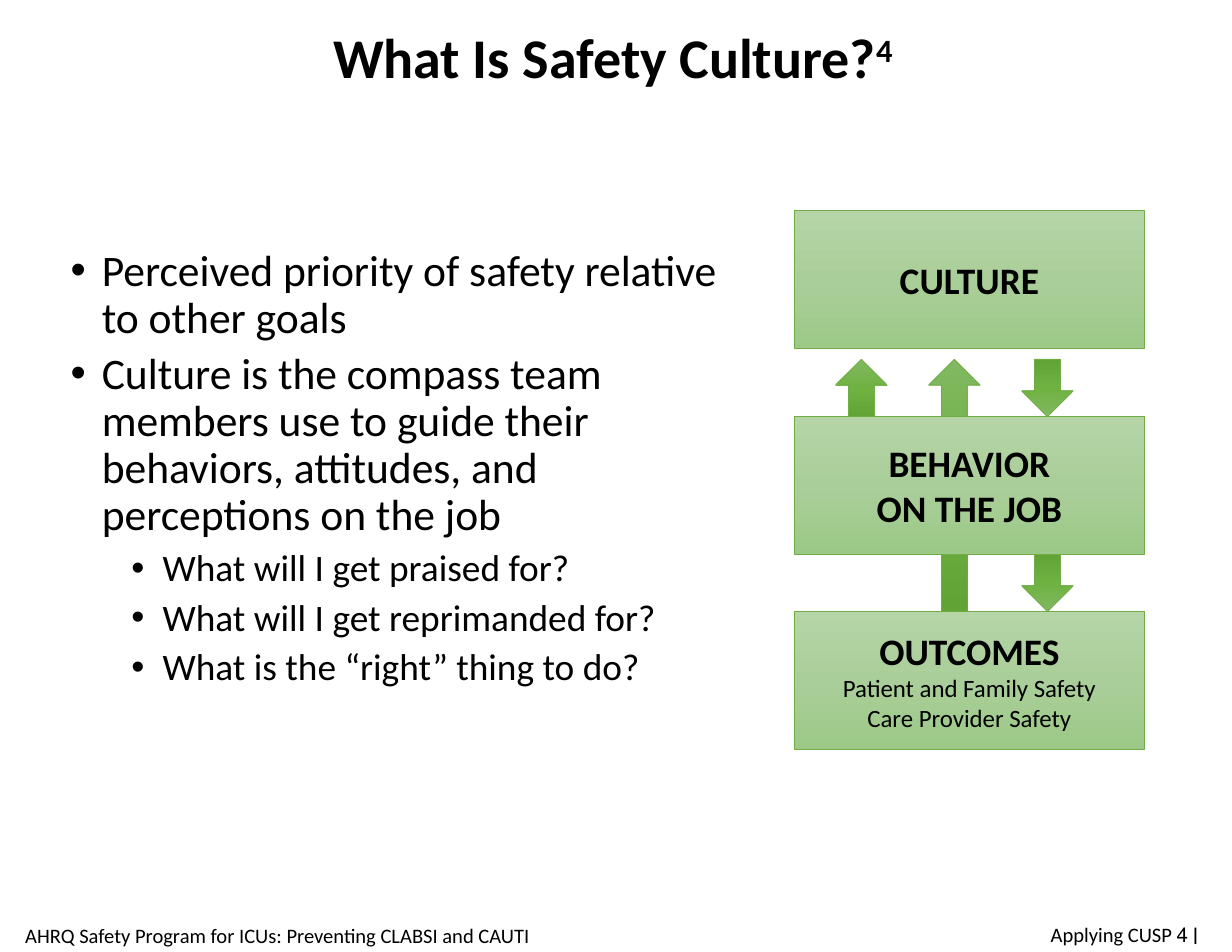
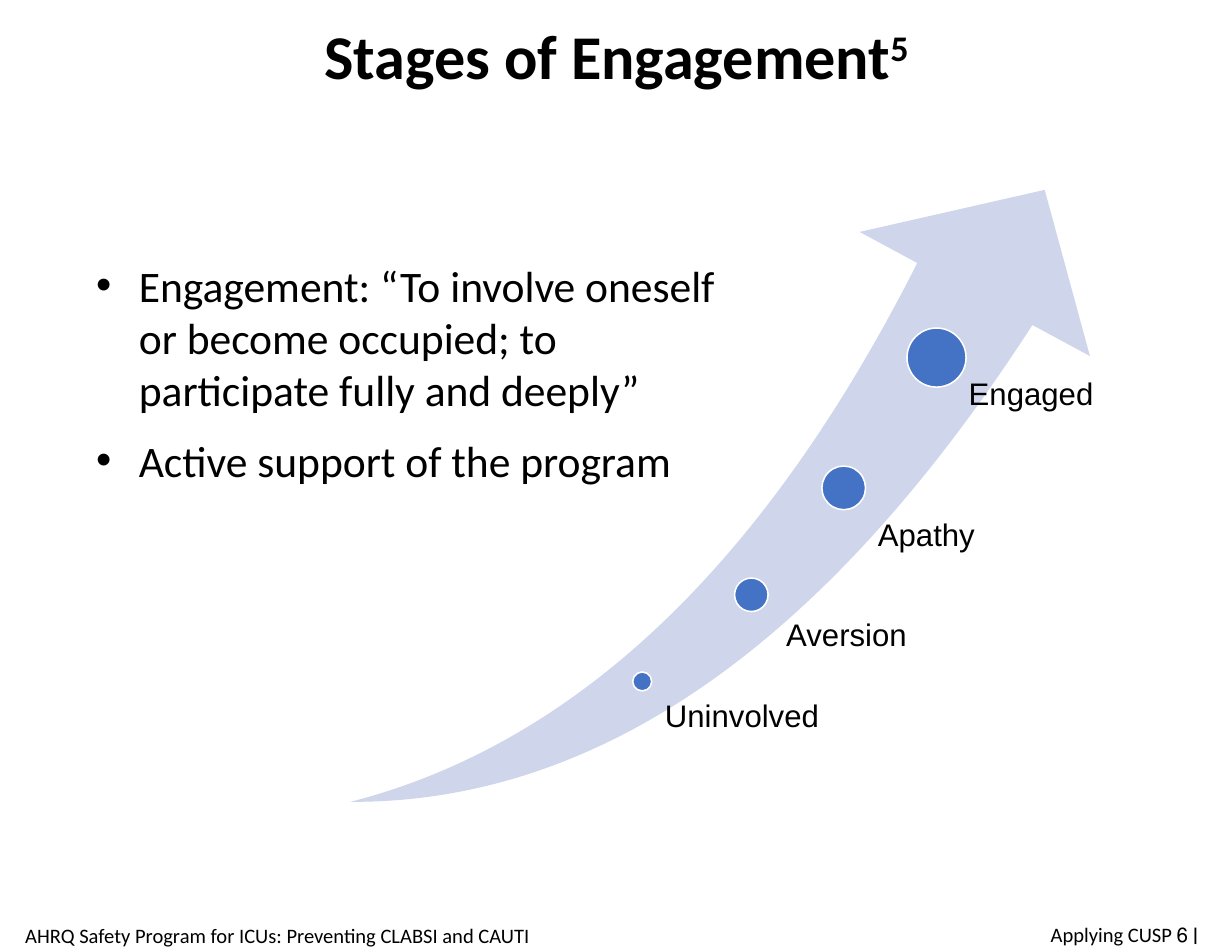
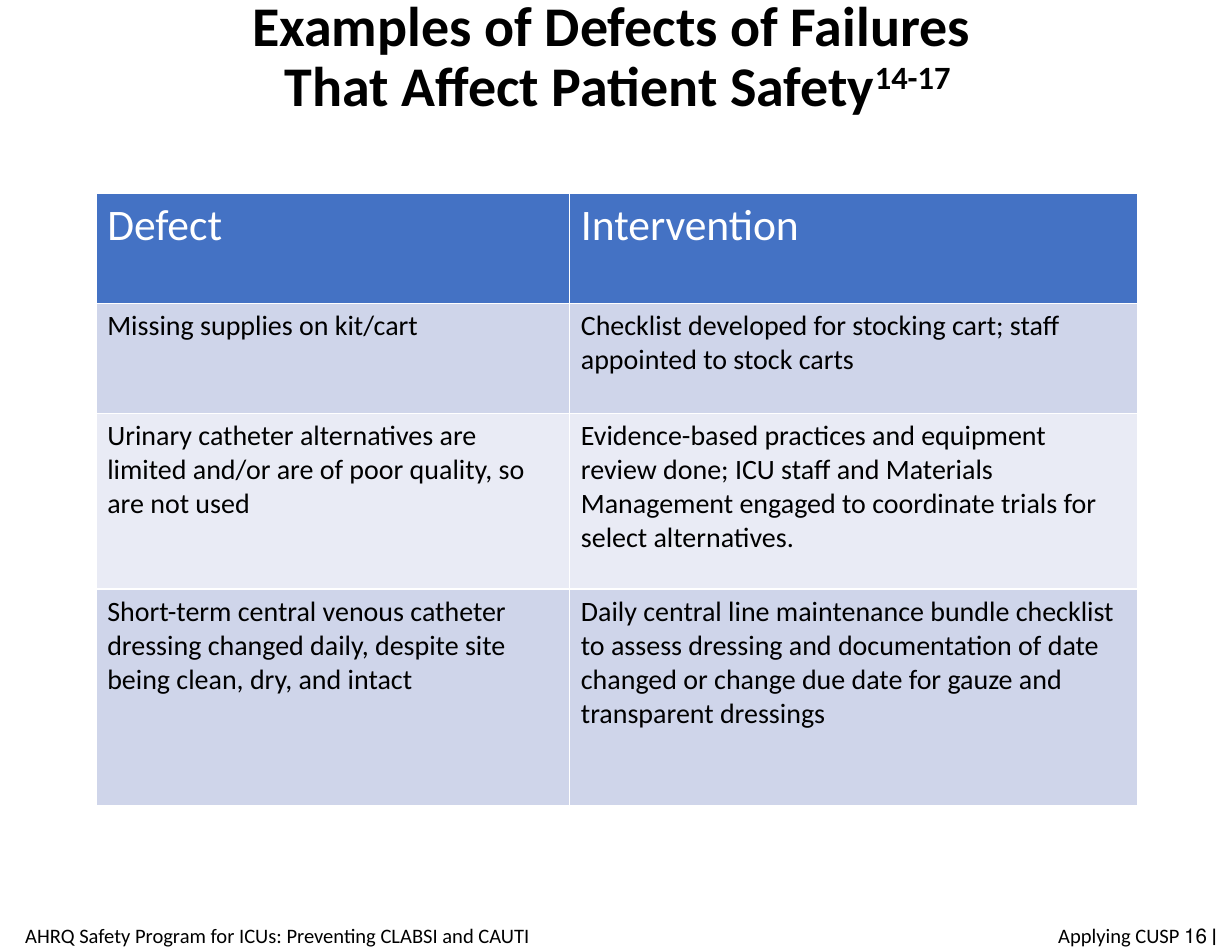
"""Build three slides on safety culture, stages of engagement and patient safety defects."""
from copy import deepcopy

from lxml import etree
from pptx import Presentation
from pptx.dml.color import RGBColor
from pptx.enum.shapes import MSO_SHAPE
from pptx.enum.text import MSO_ANCHOR, PP_ALIGN
from pptx.oxml.ns import qn
from pptx.util import Cm, Pt

RECTANGLE, OVAL = MSO_SHAPE.RECTANGLE, MSO_SHAPE.OVAL
UP_ARROW, SWOOSH = MSO_SHAPE.UP_ARROW, MSO_SHAPE.SWOOSH_ARROW
LEFT, CENTER, RIGHT = PP_ALIGN.LEFT, PP_ALIGN.CENTER, PP_ALIGN.RIGHT
TOP, MIDDLE = MSO_ANCHOR.TOP, MSO_ANCHOR.MIDDLE

COLORS = {
    "black": "000000",
    "white": "FFFFFF",
    "blue": "4472C4",
    "pale_blue": "CFD5EA",
    "paler_blue": "E9EBF5",
    "green": "70AD47",
}
ARROW_GRADIENT = ("81B861", "6FB242", "62A336")
BOX_GRADIENT = ("B5D5A7", "AACE9A", "9CC987")


def write(frame, text, superscript="", size=18, bold=False, font="Calibri", color="black",
          align=LEFT, anchor=TOP, line=1.0, before=0, after=0, bullet_at=None, hang=0):
    """Append one formatted paragraph to a text frame."""
    first = not frame.text
    paragraph = frame.paragraphs[0] if first else frame.add_paragraph()
    frame.word_wrap, frame.vertical_anchor = True, anchor
    paragraph.text = text
    if superscript:
        raised = paragraph.add_run()
        raised.text = superscript
        raised.font._element.set("baseline", "30000")
    paragraph.alignment, paragraph.line_spacing = align, line
    paragraph.space_before, paragraph.space_after = Pt(0 if first else before), Pt(after)
    if bullet_at is not None:
        properties = paragraph._p.get_or_add_pPr()
        properties.set("marL", str(Cm(bullet_at + hang)))
        properties.set("indent", str(-Cm(hang)))
        etree.SubElement(properties, qn("a:buFont")).set("typeface", "Arial")
        etree.SubElement(properties, qn("a:buChar")).set("char", "•")
    for run in paragraph.runs:
        run.font.name, run.font.size, run.font.bold = font, Pt(size), bold
        run.font.color.rgb = RGBColor.from_string(COLORS[color])


def draw(slide, kind, place, fill, outline=None, weight=1):
    """Add a preset shape with a plain colour or a downward three-colour gradient."""
    shape = slide.shapes.add_shape(kind, *map(Cm, place))
    shape.shadow.inherit = False
    if isinstance(fill, tuple):
        shape.fill.gradient()
        shape.fill.gradient_angle = 270
        start = shape.fill.gradient_stops[0]._gs
        start.addnext(deepcopy(start))
        for stop, color, position in zip(shape.fill.gradient_stops, fill, (0, 0.5, 1)):
            stop.color.rgb, stop.position = RGBColor.from_string(color), position
    else:
        shape.fill.solid()
        shape.fill.fore_color.rgb = RGBColor.from_string(COLORS[fill])
    if outline:
        shape.line.color.rgb = RGBColor.from_string(COLORS[outline])
        shape.line.width = Pt(weight)
    else:
        shape.line.fill.background()
    return shape


deck = Presentation()
deck.slide_width, deck.slide_height = Cm(27.94), Cm(21.59)

slides = []
for title, reference, title_size, title_place, number, number_place in (
    ("What Is Safety Culture?", "4", 36, (1.85, 0.58, 24.1, 1.6),
     4, (21.69, 20.68, 5.72, 1.02)),
    ("Stages of Engagement", "5", 40, (1.93, 0.2, 24.1, 2.31),
     6, (21.69, 20.68, 5.72, 1.02)),
    ("Examples of Defects of Failures \nThat Affect Patient Safety", "14-17", 36,
     (0.46, -0.33, 27.1, 3.3), 16, (21.62, 20.7, 6.22, 1.04)),
):
    slide = deck.slides.add_slide(deck.slide_layouts[6])
    heading = slide.shapes.add_textbox(*map(Cm, title_place))
    write(heading.text_frame, title, reference, size=title_size, bold=True,
          align=CENTER, anchor=MIDDLE, line=0.9)
    program = slide.shapes.add_textbox(Cm(-0.43), Cm(20.7), Cm(13.44), Cm(1.02))
    write(program.text_frame, "AHRQ Safety Program for ICUs: Preventing CLABSI and CAUTI",
          size=13.2, align=CENTER, anchor=MIDDLE)
    page = slide.shapes.add_textbox(*map(Cm, number_place))
    write(page.text_frame, f"Applying CUSP ׀ {number}", size=13.2, align=RIGHT, anchor=MIDDLE)
    slides.append(slide)
culture, engagement, defects = slides

meaning = culture.shapes.add_textbox(Cm(1.35), Cm(5.51), Cm(15.27), Cm(14.66))
for text, size, bullet_at in (
    ("Perceived priority of safety relative to other goals", 28, 0),
    ("Culture is the compass team members use to guide their behaviors, attitudes, "
     "and perceptions on the job", 28, 0),
    ("What will I get praised for?", 24, 1.38),
    ("What will I get reprimanded for?", 24, 1.38),
    ("What is the “right” thing to do?", 24, 1.38),
):
    write(meaning.text_frame, text, size=size, line=0.9, before=6, bullet_at=bullet_at, hang=0.71)

for column, top, height, rotation in (
    (0, 8.15, 1.3, 0), (1, 8.15, 5.72, 0), (2, 8.15, 1.3, 180), (2, 12.57, 1.3, 180),
):
    influence = draw(culture, UP_ARROW, (18.95 + 2.11 * column, top, 1.17, height),
                     ARROW_GRADIENT, "green", 0.5)
    influence.rotation = rotation

for top, names, details in (
    (4.78, ["CULTURE"], []),
    (9.45, ["BEHAVIOR", "ON THE JOB"], []),
    (13.87, ["OUTCOMES"], ["Patient and Family Safety", "Care Provider Safety"]),
):
    level = draw(culture, RECTANGLE, (18.01, top, 7.95, 3.12), BOX_GRADIENT, "green", 0.5)
    for name in names:
        write(level.text_frame, name, size=24, bold=True, align=CENTER, anchor=MIDDLE)
    for detail in details:
        write(level.text_frame, detail, size=16, align=CENTER, anchor=MIDDLE)

definition = engagement.shapes.add_textbox(Cm(1.93), Cm(5.74), Cm(15.44), Cm(5.28))
for text in (
    "Engagement: “To involve oneself or become occupied; to participate fully and deeply”",
    "Active support of the program",
):
    write(definition.text_frame, text, size=28, before=5.6, after=6, bullet_at=0, hang=0.97)

growth = draw(engagement, SWOOSH, (7.54, 5.79, 18.75, 11.79), "pale_blue")
growth.adjustments[0] = growth.adjustments[1] = 0.25
growth.rotation = 111.9
growth._element.spPr.find(qn("a:xfrm")).set("flipH", "1")

for stage, dot_left, dot_top, diameter, label_left, label_top in (
    ("Engaged", 20.57, 7.44, 1.34, 21.72, 8.36),
    ("Apathy", 18.64, 10.57, 0.99, 19.66, 11.56),
    ("Aversion", 16.66, 13.11, 0.76, 17.58, 13.84),
    ("Uninvolved", 14.35, 15.24, 0.43, 14.83, 15.67),
):
    draw(engagement, OVAL, (dot_left, dot_top, diameter, diameter), "blue", "white")
    label = engagement.shapes.add_textbox(Cm(label_left), Cm(label_top), Cm(6.22), Cm(1.19))
    write(label.text_frame, stage, size=20, font="Arial")

examples = (
    ("Defect", "Intervention"),
    ("Missing supplies on kit/cart",
     "Checklist developed for stocking cart; staff appointed to stock carts"),
    ("Urinary catheter alternatives are limited and/or are of poor quality, so are not used",
     "Evidence-based practices and equipment review done; ICU staff and Materials Management "
     "engaged to coordinate trials for select alternatives."),
    ("Short-term central venous catheter dressing changed daily, despite site being clean, "
     "dry, and intact",
     "Daily central line maintenance bundle checklist to assess dressing and documentation of "
     "date changed or change due date for gauze and transparent dressings"),
)
table = defects.shapes.add_table(4, 2, Cm(2.18), Cm(4.39), Cm(23.62), Cm(13.87)).table
for column, width in zip(table.columns, (10.74, 12.88)):
    column.width = Cm(width)
row_fills = ("blue", "pale_blue", "paler_blue", "pale_blue")
for row, height, fill, texts in zip(table.rows, (2.49, 2.49, 3.99, 4.9), row_fills, examples):
    row.height = Cm(height)
    is_header = fill == "blue"
    for cell, text in zip(row.cells, texts):
        cell.fill.solid()
        cell.fill.fore_color.rgb = RGBColor.from_string(COLORS[fill])
        write(cell.text_frame, text, size=28 if is_header else 18,
              color="white" if is_header else "black")

deck.save("out.pptx")
